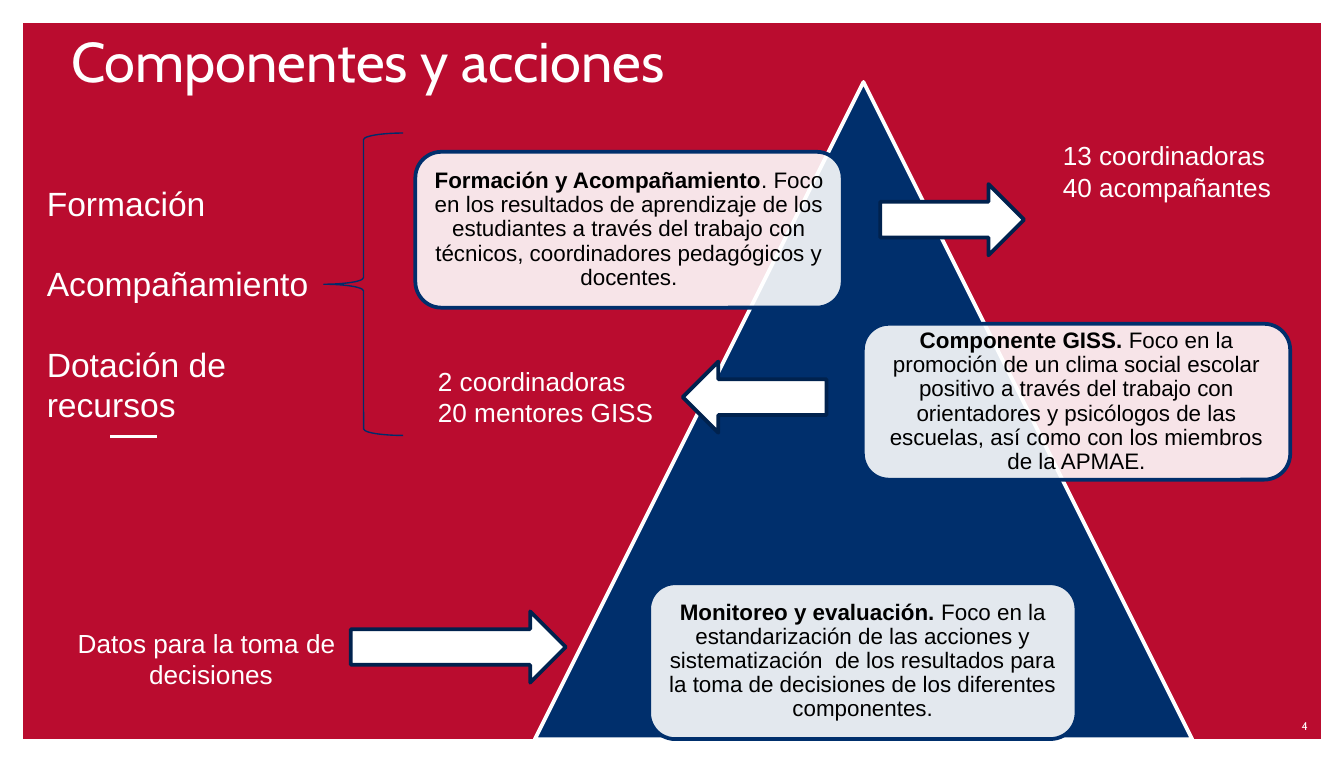
from typing import NamedTuple

from lxml.etree import SubElement
from pptx import Presentation
from pptx.dml.color import RGBColor
from pptx.enum.shapes import MSO_CONNECTOR, MSO_SHAPE as Preset
from pptx.enum.text import MSO_ANCHOR as Anchor, PP_ALIGN as Align
from pptx.oxml.ns import qn
from pptx.util import Inches, Pt

# Grid: 100 columns across, 56.7 rows down, square cells
COLUMNS, ROWS = 100, 56.7
CELL = Inches(0.1)
RED, NAVY, DARK_NAVY, BRACE_BLUE = "BA0C2F", "002F6C", "00224E", "002C6B"
WHITE, BLACK = "FFFFFF", "000000"


class Box(NamedTuple):
    col: float
    row: float
    cols: float
    rows: float


class Card(NamedTuple):
    col: float
    row: float
    heading: str
    detail: str


class Arrow(NamedTuple):
    col: float
    row: float
    cols: float
    rotation: int = 0


class Label(NamedTuple):
    box: Box
    lines: list[str]
    size: int = 14
    gap: float = 0
    last_align: Align = Align.LEFT


CARDS = [
    Card(30.9, 11.3, "Formación y Acompañamiento",
         ". Foco en los resultados de aprendizaje de los estudiantes a través del trabajo con "
         "técnicos, coordinadores pedagógicos y docentes."),
    Card(64.2, 24.1, "Componente GISS. ",
         "Foco en la promoción de un clima social escolar positivo a través del trabajo con "
         "orientadores y psicólogos de las escuelas, así como con los miembros de la APMAE."),
    Card(48.3, 43.4, "Monitoreo y evaluación. ",
         "Foco en la estandarización de las acciones y sistematización  de los resultados para "
         "la toma de decisiones de los diferentes componentes."),
]
ARROWS = [Arrow(65.5, 13.7, 10.7), Arrow(50.8, 26.9, 10.7, 180), Arrow(26.1, 45.5, 16)]
LABELS = [
    Label(Box(78.1, 9.9, 17.6, 5.7), ["13 coordinadoras", "40 acompañantes"]),
    Label(Box(31.6, 26.7, 18.1, 5.7), ["2 coordinadoras", "20 mentores GISS"]),
    Label(Box(2.5, 13.1, 22.5, 19.2),
          ["Formación", "Acompañamiento", "Dotación de recursos"], size=18, gap=21.6),
    Label(Box(4.8, 46.2, 21.8, 5.7), ["Datos para la toma de", "decisiones"],
          last_align=Align.CENTER),
]


def cells(count: float) -> int:
    return round(count * CELL)


def place(box: Box) -> list[int]:
    return [cells(length) for length in box]


def paint(color_format, color: str) -> None:
    color_format.rgb = RGBColor.from_string(color)


def write(paragraph, text: str, *, size: float, color: str = WHITE, font: str = "Arial",
          bold: bool = False, align: Align = Align.LEFT) -> None:
    paragraph.alignment = align
    run = paragraph.add_run()
    run.text = text
    run.font.size, run.font.name, run.font.bold = Pt(size), font, bold
    paint(run.font.color, color)


def add_text_frame(slide, box: Box, anchor: Anchor = Anchor.TOP):
    frame = slide.shapes.add_textbox(*place(box)).text_frame
    frame.word_wrap = True
    frame.vertical_anchor = anchor
    return frame


def add_preset(slide, preset: Preset, box: Box, fill: str | None = None,
               line: str | None = None, width: float = 2):
    shape = slide.shapes.add_shape(preset, *place(box))
    shape.shadow.inherit = False
    if fill:
        shape.fill.solid()
        paint(shape.fill.fore_color, fill)
    else:
        shape.fill.background()
    if line:
        paint(shape.line.color, line)
        shape.line.width = Pt(width)
    else:
        shape.line.fill.background()
    return shape


def set_opacity(shape, percent: int) -> None:
    tint = shape.fill._xPr.find(qn("a:solidFill"))[0]
    SubElement(tint, qn("a:alpha"), val=str(percent * 1000))


def add_accent_line(slide, start: float, end: float, row: float) -> None:
    accent = slide.shapes.add_connector(
        MSO_CONNECTOR.STRAIGHT, cells(start), cells(row), cells(end), cells(row))
    paint(accent.line.color, WHITE)
    accent.line.width = Pt(1.5)
    SubElement(accent._element.spPr, qn("a:effectLst"))


def add_card(slide, card: Card) -> None:
    shape = add_preset(slide, Preset.ROUNDED_RECTANGLE, Box(card.col, card.row, 31.8, 11.6),
                       WHITE, NAVY)
    set_opacity(shape, 89)
    frame = shape.text_frame
    frame.word_wrap = True
    frame.vertical_anchor = Anchor.MIDDLE
    frame.margin_left = frame.margin_right = Inches(0.05)
    paragraph = frame.paragraphs[0]
    paragraph.line_spacing = 0.9
    for text, bold in ((card.heading, True), (card.detail, False)):
        write(paragraph, text, size=12, color=BLACK, bold=bold, align=Align.CENTER)


def add_arrow(slide, arrow: Arrow) -> None:
    shape = add_preset(slide, Preset.RIGHT_ARROW, Box(arrow.col, arrow.row, arrow.cols, 5.3),
                       WHITE, DARK_NAVY)
    shape.rotation = arrow.rotation


def add_label(slide, label: Label) -> None:
    frame = add_text_frame(slide, label.box)
    for index, line in enumerate(label.lines):
        paragraph = frame.add_paragraph() if index else frame.paragraphs[0]
        paragraph.space_before = Pt(label.gap if index else 0)
        is_last = index == len(label.lines) - 1
        write(paragraph, line, size=label.size,
              align=label.last_align if is_last else Align.LEFT)


def main() -> None:
    deck = Presentation()
    deck.slide_width, deck.slide_height = cells(COLUMNS), cells(ROWS)
    slide = deck.slides.add_slide(deck.slide_layouts[6])
    slide.background.fill.solid()
    paint(slide.background.fill.fore_color, RED)

    # White border, accent line and page number
    border = add_preset(slide, Preset.FRAME, Box(0, 0, COLUMNS, ROWS), WHITE)
    border.adjustments[0] = 0.03
    add_accent_line(slide, 8.2, 11.7, 32.5)
    page_number = add_text_frame(slide, Box(75, 53, 23.3, 2), Anchor.MIDDLE)
    write(page_number.paragraphs[0], "4", size=6, font="Cabin", align=Align.RIGHT)

    # Title
    title = add_text_frame(slide, Box(4.3, 1.9, 54.5, 5.6), Anchor.BOTTOM)
    write(title.paragraphs[0], "Componentes y acciones", size=30, font="Cabin")

    # Pyramid with its component cards
    add_preset(slide, Preset.ISOSCELES_TRIANGLE, Box(39.8, 6.1, 48.9, 48.9), NAVY, WHITE)
    for card in CARDS:
        add_card(slide, card)

    # Actions around the pyramid
    for arrow in ARROWS:
        add_arrow(slide, arrow)
    add_preset(slide, Preset.LEFT_BRACE, Box(24.1, 9.9, 5.9, 22.5), line=BRACE_BLUE, width=0.75)
    for label in LABELS:
        add_label(slide, label)

    deck.save("out.pptx")


if __name__ == "__main__":
    main()
